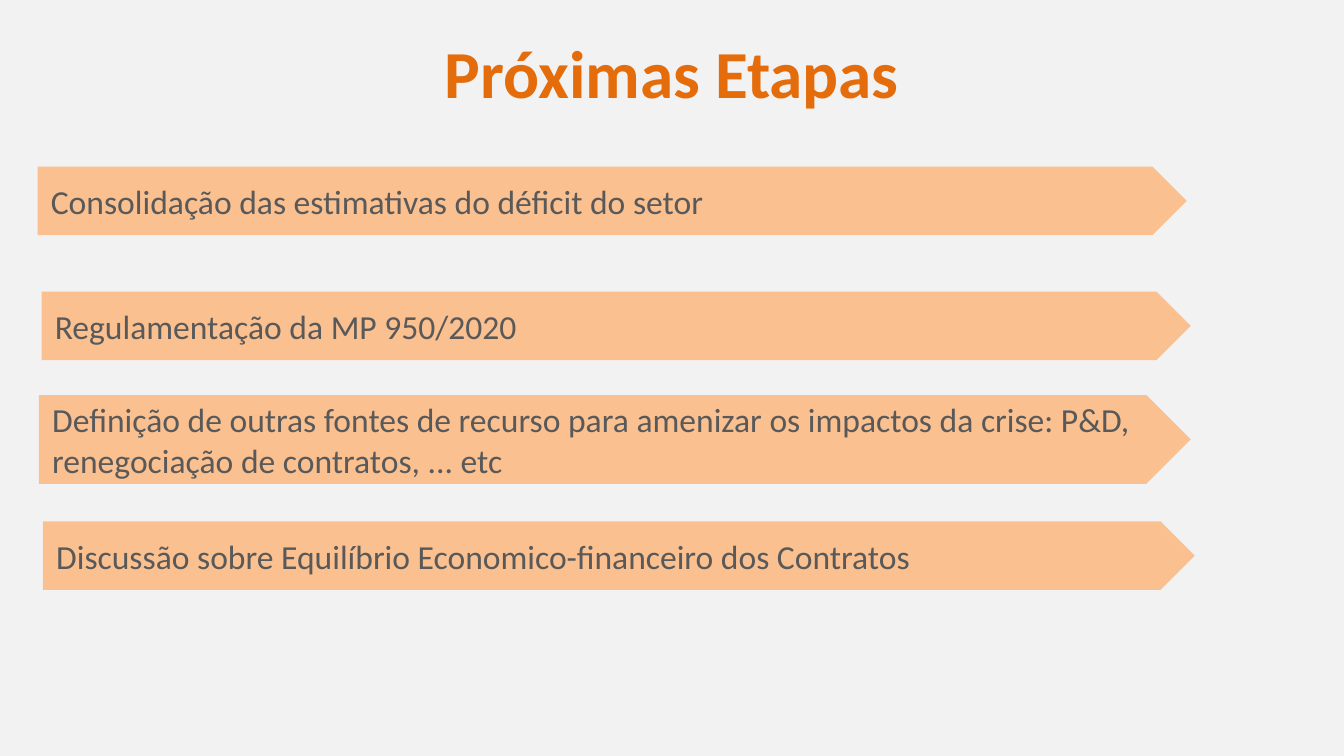
from pptx import Presentation
from pptx.dml.color import RGBColor
from pptx.enum.shapes import MSO_SHAPE
from pptx.enum.text import MSO_ANCHOR, MSO_AUTO_SIZE, PP_ALIGN
from pptx.util import Inches, Pt

THEME = {
    "background": RGBColor.from_string("F2F2F2"),
    "arrow": RGBColor.from_string("FAC090"),
    "title": {"name": "Calibri", "size": Pt(36), "bold": True},
    "title_color": RGBColor.from_string("E46C0A"),
    "step": {"name": "Calibri", "size": Pt(18), "bold": False},
    "step_color": RGBColor.from_string("595959"),
}

# Left, top, width, height in inches, then the wording
STEPS = [
    (0.28, 1.24, 8.55, 0.51, "Consolidação das estimativas do déficit do setor"),
    (0.31, 2.17, 8.55, 0.51, "Regulamentação da MP 950/2020"),
    (0.29, 2.94, 8.57, 0.66,
     "Definição de outras fontes de recurso para amenizar os impactos da crise: "
     "P&D, renegociação de contratos, ... etc"),
    (0.32, 3.88, 8.57, 0.51,
     "Discussão sobre Equilíbrio Economico-financeiro dos Contratos"),
]


def write_text(shape, text, style, alignment):
    """Put one vertically centred paragraph in the shape, in a THEME style."""
    frame = shape.text_frame
    frame.text = text
    frame.word_wrap = True
    frame.auto_size = MSO_AUTO_SIZE.NONE
    frame.vertical_anchor = MSO_ANCHOR.MIDDLE
    paragraph = frame.paragraphs[0]
    paragraph.alignment = alignment
    font = paragraph.runs[0].font
    for attribute, value in THEME[style].items():
        setattr(font, attribute, value)
    font.color.rgb = THEME[f"{style}_color"]


presentation = Presentation()
presentation.slide_width = Inches(10)
presentation.slide_height = Inches(10) * 9 // 16  # widescreen 16:9

TITLE_ONLY = 5
slide = presentation.slides.add_slide(presentation.slide_layouts[TITLE_ONLY])
slide.background.fill.solid()
slide.background.fill.fore_color.rgb = THEME["background"]

title = slide.shapes.title
title.left, title.top = Inches(0), Inches(0.18)
title.width, title.height = Inches(10), Inches(0.7)
write_text(title, "Próximas Etapas", "title", PP_ALIGN.CENTER)

for *box, text in STEPS:
    arrow = slide.shapes.add_shape(MSO_SHAPE.PENTAGON, *map(Inches, box))
    arrow.shadow.inherit = False
    arrow.fill.solid()
    arrow.fill.fore_color.rgb = THEME["arrow"]
    arrow.line.fill.background()
    write_text(arrow, text, "step", PP_ALIGN.LEFT)

presentation.save("out.pptx")
